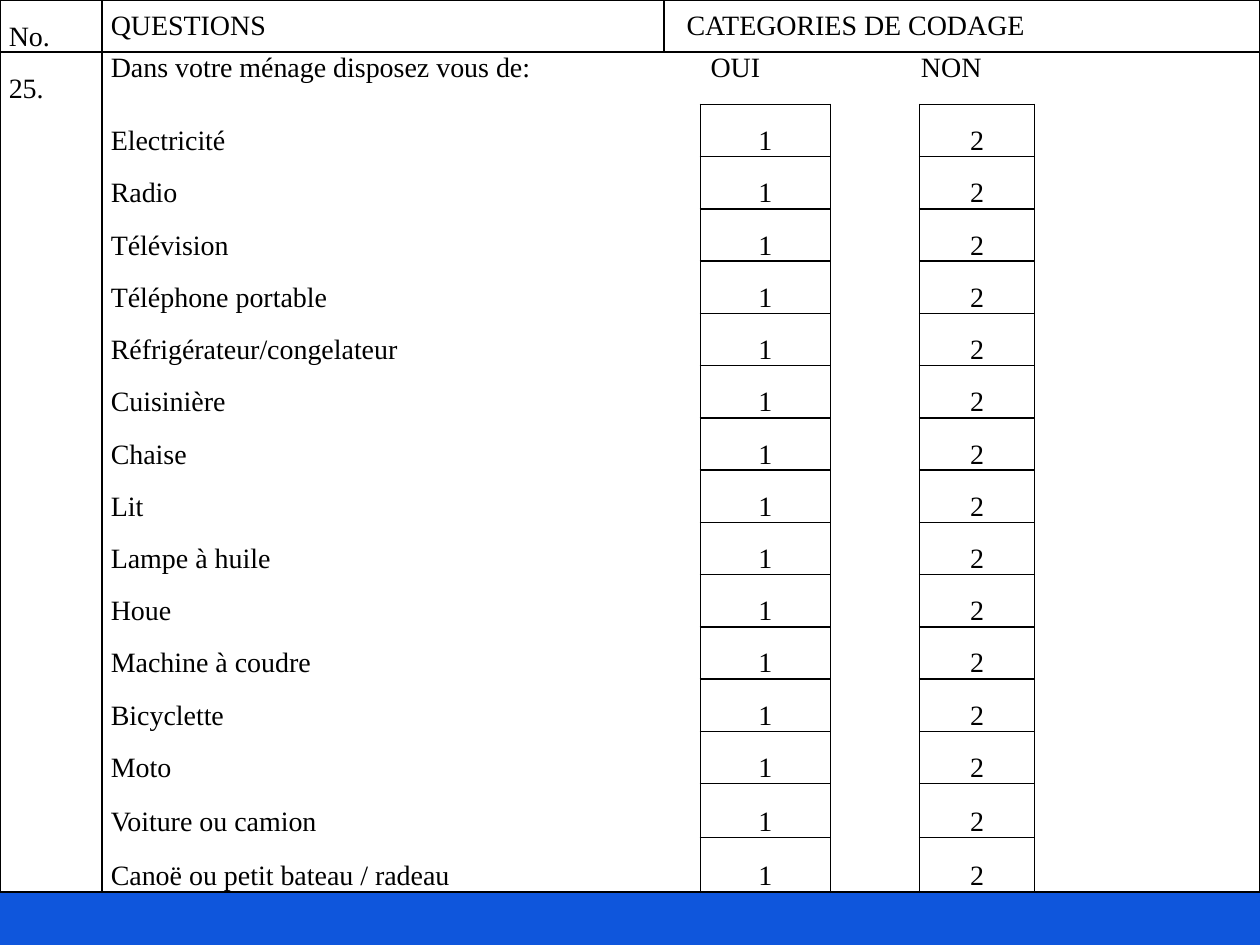
"""Build a survey questionnaire slide with one household equipment table."""
from dataclasses import dataclass
from itertools import product

from lxml.etree import SubElement
from pptx import Presentation
from pptx.dml.color import RGBColor
from pptx.enum.text import MSO_ANCHOR as Anchor, PP_ALIGN as Align
from pptx.oxml.ns import qn
from pptx.table import Table, _Cell as Cell
from pptx.util import Inches, Pt

COLORS = {"background": "0F56DC", "cell": "FFFFFF", "ink": "000000"}
FONT, FONT_SIZE = "Times New Roman", 16
NO_STYLE = "{2D5ABB26-0587-4C30-8999-92F81FD0307C}"
SLIDE_WIDTH, SLIDE_HEIGHT = 10, 7.5
TABLE_HEIGHT, TALL_ROW, TALL_COUNT = 7.08, 0.43, 2
COLUMNS = (0.81, 4.46, 0.29, 1.03, 0.71, 0.91, 0.17, 1.62)
ANSWER_TABS = (4.76, 6.43)
ITEMS = (
    "Electricité", "Radio", "Télévision", "Téléphone portable",
    "Réfrigérateur/congelateur", "Cuisinière", "Chaise", "Lit",
    "Lampe à huile", "Houe", "Machine à coudre", "Bicyclette", "Moto",
    "Voiture ou camion", "Canoë ou petit bateau / radeau",
)
ROW_COUNT = len(ITEMS) + 2


@dataclass(frozen=True)
class Entry:
    """Content and look of one table cell."""
    column: int
    text: str = ""
    borders: str = "LRTB"
    anchor: Anchor = Anchor.BOTTOM
    align: Align = Align.LEFT
    span: int = 1
    indent: float = 0
    tabs: tuple[float, ...] = ()


HEADER = (
    Entry(0, "No."),
    Entry(1, "QUESTIONS", anchor=Anchor.MIDDLE),
    Entry(2, "CATEGORIES DE CODAGE", anchor=Anchor.MIDDLE, span=6, indent=0.11),
)
QUESTION = (
    Entry(0, "25.", "LRT"),
    Entry(1, "Dans votre ménage disposez vous de:\tOUI\tNON", "LT",
          Anchor.TOP, span=6, tabs=ANSWER_TABS),
    Entry(7, borders="RT"),
)


def item_entries(label: str, is_last: bool) -> tuple[Entry, ...]:
    """Return the cells of one equipment row."""
    bottom = "B" if is_last else ""
    return (
        Entry(0, borders="LR" + bottom),
        Entry(1, label, "L" + bottom),
        Entry(2, borders="R" + bottom),
        Entry(3, "1", align=Align.CENTER),
        Entry(4, borders="LR" + bottom),
        Entry(5, "2", align=Align.CENTER),
        Entry(6, borders="LR" + bottom, span=2),
    )


def add_borders(cell: Cell, sides: str) -> None:
    """Draw the listed sides of a cell and leave the others empty."""
    properties = cell._tc.get_or_add_tcPr()
    for side in "LRTB":
        line = SubElement(properties, qn(f"a:ln{side}"), w=str(Pt(1)))
        if side in sides:
            fill = SubElement(line, qn("a:solidFill"))
            SubElement(fill, qn("a:srgbClr"), val=COLORS["ink"])
        else:
            SubElement(line, qn("a:noFill"))


def fill_cell(table: Table, row: int, entry: Entry) -> None:
    """Write and format one cell, merged over its span."""
    cell = table.cell(row, entry.column)
    if entry.span > 1:
        cell.merge(table.cell(row, entry.column + entry.span - 1))
    add_borders(cell, entry.borders)
    cell.fill.solid()
    cell.fill.fore_color.rgb = RGBColor.from_string(COLORS["cell"])
    cell.vertical_anchor = entry.anchor
    cell.margin_left = cell.margin_right = Inches(0.07)
    cell.margin_top = cell.margin_bottom = 0
    cell.text_frame.text = entry.text
    paragraph = cell.text_frame.paragraphs[0]
    paragraph.alignment = entry.align
    properties = paragraph._p.get_or_add_pPr()
    if entry.indent:
        properties.set("marL", str(Inches(entry.indent)))
    if entry.tabs:
        tab_list = SubElement(properties, qn("a:tabLst"))
        for position in entry.tabs:
            SubElement(tab_list, qn("a:tab"), pos=str(Inches(position)), algn="l")
    for run in paragraph.runs:
        run.font.name, run.font.size = FONT, Pt(FONT_SIZE)
        run.font.color.rgb = RGBColor.from_string(COLORS["ink"])


def size_grid(table: Table) -> None:
    """Set column widths and row heights."""
    for column, width in zip(table.columns, COLUMNS):
        column.width = Inches(width)
    regular_count = ROW_COUNT - TALL_COUNT
    regular = (TABLE_HEIGHT - TALL_COUNT * TALL_ROW) / regular_count
    for index, row in enumerate(table.rows):
        row.height = Inches(regular if index < regular_count else TALL_ROW)
    for row, column in product(range(ROW_COUNT), range(len(COLUMNS))):
        cell = table.cell(row, column)
        cell.margin_top = cell.margin_bottom = 0


def main() -> None:
    """Create and save the presentation."""
    presentation = Presentation()
    presentation.slide_width = Inches(SLIDE_WIDTH)
    presentation.slide_height = Inches(SLIDE_HEIGHT)
    slide = presentation.slides.add_slide(presentation.slide_layouts[6])
    slide.background.fill.solid()
    slide.background.fill.fore_color.rgb = RGBColor.from_string(COLORS["background"])
    shape = slide.shapes.add_table(ROW_COUNT, len(COLUMNS), 0, 0,
                                   Inches(SLIDE_WIDTH), Inches(TABLE_HEIGHT))
    table = shape.table
    table.first_row = table.horz_banding = False
    table._tbl.tblPr.find(qn("a:tableStyleId")).text = NO_STYLE
    size_grid(table)
    item_rows = [item_entries(label, label == ITEMS[-1]) for label in ITEMS]
    for row, entries in enumerate([HEADER, QUESTION, *item_rows]):
        for entry in entries:
            fill_cell(table, row, entry)
    presentation.save("out.pptx")


if __name__ == "__main__":
    main()
